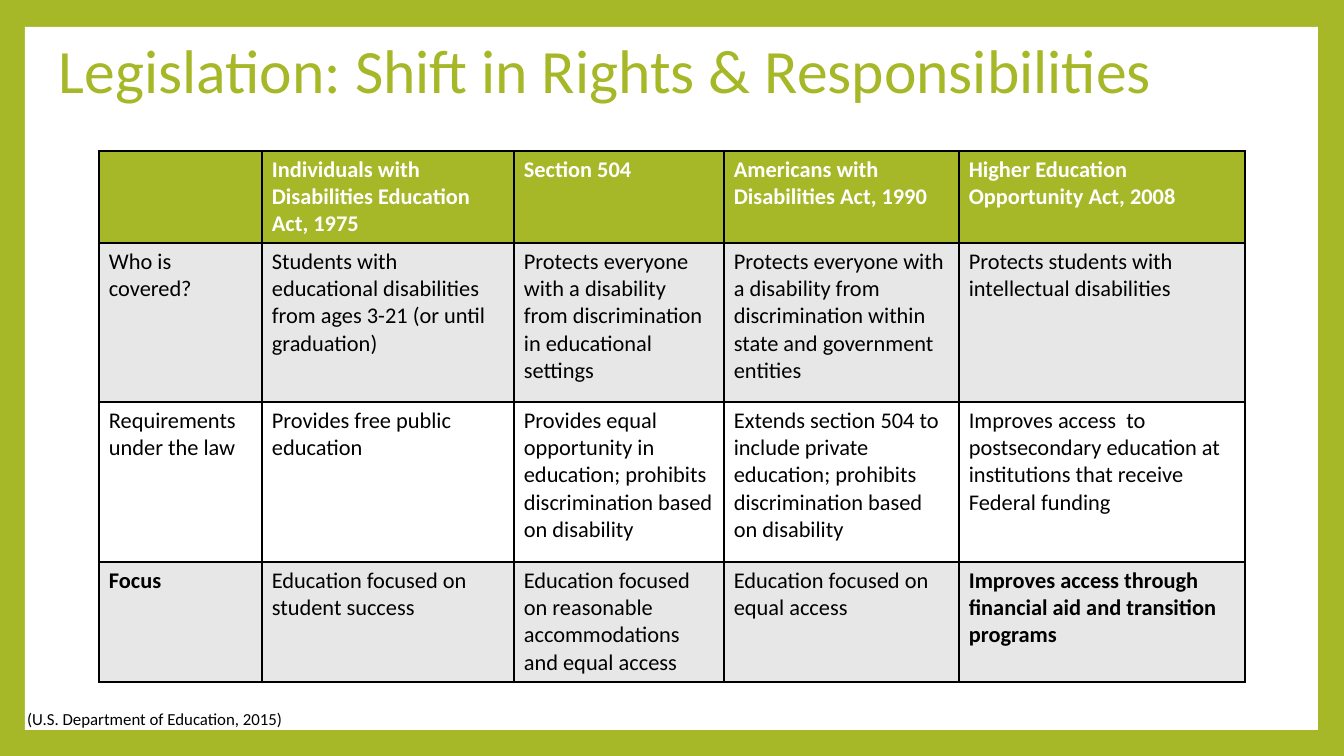
from lxml import etree
from pptx import Presentation
from pptx.dml.color import RGBColor
from pptx.enum.shapes import MSO_SHAPE
from pptx.enum.text import MSO_ANCHOR
from pptx.oxml.ns import qn
from pptx.util import Pt

RECT = MSO_SHAPE.RECTANGLE
TOP = MSO_ANCHOR.TOP
PX = 914400 / 134.4
FONT = "Calibri"
GREEN, WHITE, BLACK, GREY = "A6B727", "FFFFFF", "000000", "E7E7E7"
COLUMNS = [163, 252, 210, 235, 286]
ROWS = [92, 159, 160, 120]
ROW_FILLS = [GREEN, GREY, WHITE, GREY]
BOLD_CELLS = {(3, 0), (3, 4)}
LAWS = [
    ["", "Individuals with Disabilities Education Act, 1975", "Section 504",
     "Americans with Disabilities Act, 1990",
     "Higher Education Opportunity Act, 2008"],
    ["Who is covered?",
     "Students with educational disabilities from ages 3-21 (or until graduation)",
     "Protects everyone with a disability from discrimination in educational settings",
     "Protects everyone with a disability from discrimination within state and "
     "government entities",
     "Protects students with intellectual disabilities"],
    ["Requirements under the law", "Provides free public education",
     "Provides equal opportunity in education; prohibits discrimination based on disability",
     "Extends section 504 to include private education; prohibits discrimination "
     "based on disability",
     "Improves access  to postsecondary education at institutions that receive "
     "Federal funding"],
    ["Focus", "Education focused on student success",
     "Education focused on reasonable accommodations and equal access",
     "Education focused on equal access",
     "Improves access through financial aid and transition programs"],
]


def px(n):
    """Turn px into EMU."""
    return round(n * PX)


def paint(target, color):
    """Give a fill a solid hex colour."""
    target.solid()
    target.fore_color.rgb = RGBColor.from_string(color)


def add_run(p, text, size, color, bold=False):
    """Add one styled run to a paragraph."""
    r = p.add_run()
    r.text = text
    r.font.name = FONT
    r.font.size = Pt(size)
    r.font.bold = bold
    paint(r.font.fill, color)


def add_frame(s, x, y, w, h):
    """Draw the green background and the white panel in the given box."""
    paint(s.background.fill, GREEN)
    sp = s.shapes.add_shape(RECT, px(x), px(y), px(w), px(h))
    sp.shadow.inherit = False
    paint(sp.fill, WHITE)
    sp.line.fill.background()


def add_text(s, x, y, w, h, text, size, color, inset, spacing=1.0):
    """Place a one-line text box in the given box."""
    tf = s.shapes.add_textbox(px(x), px(y), px(w), px(h)).text_frame
    tf.word_wrap = True
    tf.vertical_anchor = TOP
    tf.margin_left = tf.margin_right = px(13)
    tf.margin_top = tf.margin_bottom = px(inset)
    p = tf.paragraphs[0]
    p.line_spacing = spacing
    add_run(p, text, size, color)


def add_borders(cell):
    """Put a thin black line on each side of a cell."""
    tc_pr = cell._tc.get_or_add_tcPr()
    for i, side in enumerate(("a:lnL", "a:lnR", "a:lnT", "a:lnB")):
        ln = etree.Element(qn(side), w=str(Pt(1)))
        fill = etree.SubElement(ln, qn("a:solidFill"))
        etree.SubElement(fill, qn("a:srgbClr"), val=BLACK)
        tc_pr.insert(i, ln)


def add_law_table(s, x, y):
    """Build the comparison of laws from its top left corner."""
    table = s.shapes.add_table(len(ROWS), len(COLUMNS), px(x), px(y),
                               px(sum(COLUMNS)), px(sum(ROWS))).table
    for column, w in zip(table.columns, COLUMNS):
        column.width = px(w)
    for i, (row, h) in enumerate(zip(table.rows, ROWS)):
        row.height = px(h)
        header = i == 0
        for j, cell in enumerate(row.cells):
            cell.margin_left = cell.margin_right = px(10)
            cell.margin_top = cell.margin_bottom = px(5)
            paint(cell.fill, ROW_FILLS[i])
            add_borders(cell)
            if LAWS[i][j]:
                add_run(cell.text_frame.paragraphs[0], LAWS[i][j], 12,
                        WHITE if header else BLACK,
                        header or (i, j) in BOLD_CELLS)


def main():
    """Build and save the slide."""
    prs = Presentation()
    prs.slide_width, prs.slide_height = px(1344), px(756)
    s = prs.slides.add_slide(prs.slide_layouts[6])
    add_frame(s, 25, 27, 1293, 703)
    add_text(s, 46, 27, 1253, 85,
             "Legislation: Shift in Rights & Responsibilities", 33, GREEN, 13, 0.9)
    add_law_table(s, 99, 151)
    add_text(s, 14, 702, 290, 34, "(U.S. Department of Education, 2015)", 9, BLACK, 7)
    prs.save("out.pptx")


if __name__ == "__main__":
    main()
